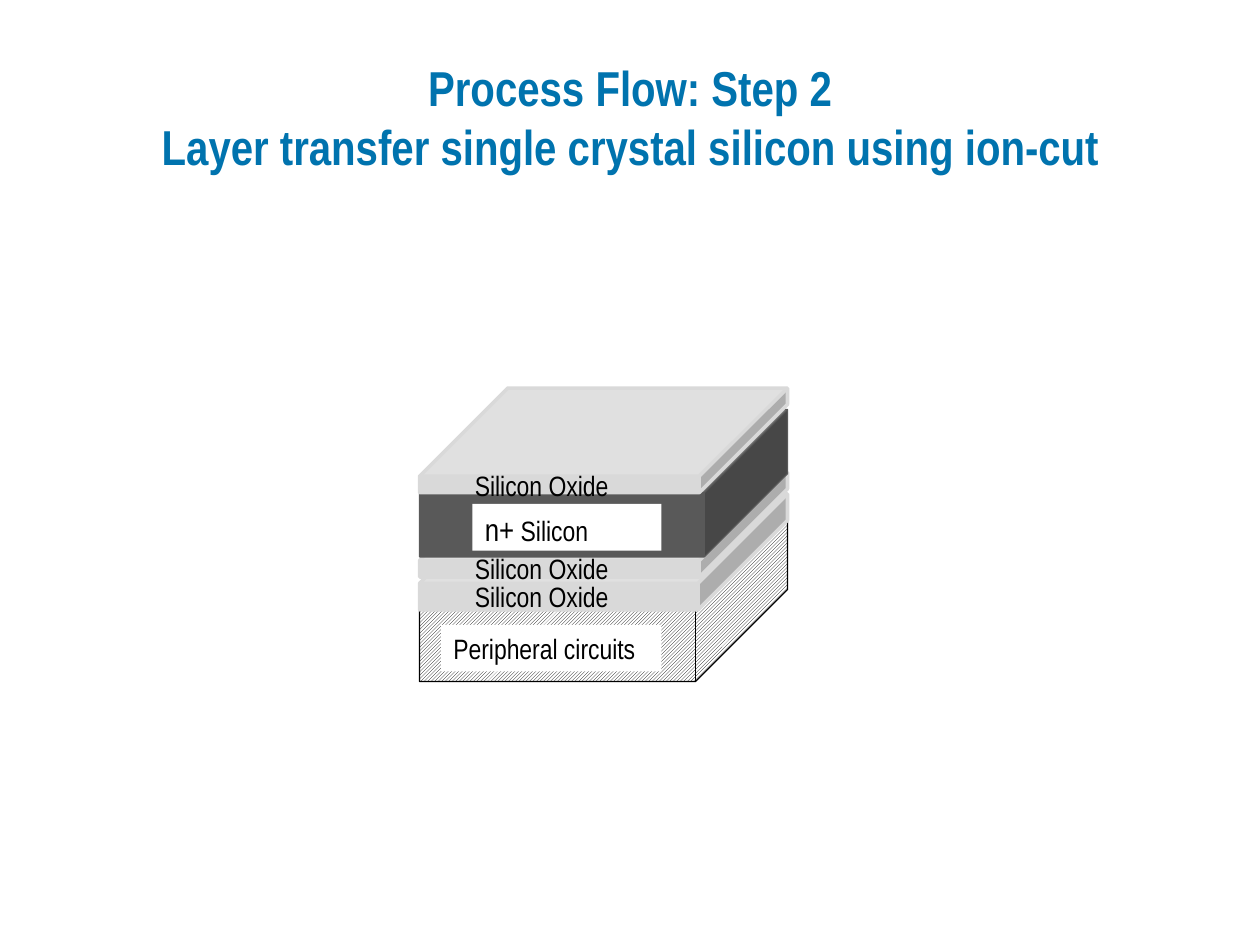
from dataclasses import dataclass

import pptx
import pptx.dml.color
import pptx.enum.dml
import pptx.enum.shapes
import pptx.enum.text
import pptx.util

Inches = pptx.util.Inches
Pt = pptx.util.Pt
RGBColor = pptx.dml.color.RGBColor

BLUE = RGBColor(0x00, 0x73, 0xAE)
BLACK = RGBColor(0x00, 0x00, 0x00)
WHITE = RGBColor(0xFF, 0xFF, 0xFF)
OXIDE = RGBColor(0xD9, 0xD9, 0xD9)
SILICON = RGBColor(0x59, 0x59, 0x59)
FONT = "Arial Narrow"

STACK_LEFT = 3.33
STACK_WIDTH = 2.92
LABEL_HEIGHT = 0.37


@dataclass
class Label:
    spans: list[tuple[str, int]]
    left: float
    top: float
    width: float
    boxed: bool = False


@dataclass
class Layer:
    top: float
    height: float
    depth: float  # receding edge, in inches
    color: RGBColor
    line_width: float
    label: Label
    hatched: bool = False


def oxide_layer(top: float, height: float, depth: float, label_top: float) -> Layer:
    label = Label([("Silicon Oxide", 16)], 3.67, label_top, 2.25)
    return Layer(top, height, depth, OXIDE, 2, label)


def draw_layer(page, layer: Layer) -> None:
    cube = page.shapes.add_shape(
        pptx.enum.shapes.MSO_SHAPE.CUBE, Inches(STACK_LEFT), Inches(layer.top),
        Inches(STACK_WIDTH), Inches(layer.height))
    cube.adjustments[0] = layer.depth / layer.height
    cube.shadow.inherit = False
    if layer.hatched:
        cube.fill.patterned()
        cube.fill.pattern = pptx.enum.dml.MSO_PATTERN.DARK_UPWARD_DIAGONAL
        cube.fill.fore_color.rgb = layer.color
        cube.fill.back_color.rgb = WHITE
    else:
        cube.fill.solid()
        cube.fill.fore_color.rgb = layer.color
    cube.line.color.rgb = layer.color
    cube.line.width = Pt(layer.line_width)


def draw_label(page, label: Label) -> None:
    box = page.shapes.add_textbox(
        Inches(label.left), Inches(label.top), Inches(label.width), Inches(LABEL_HEIGHT))
    if label.boxed:
        box.fill.solid()
        box.fill.fore_color.rgb = WHITE
    frame = box.text_frame
    frame.word_wrap = True
    frame.auto_size = pptx.enum.text.MSO_AUTO_SIZE.SHAPE_TO_FIT_TEXT
    para = frame.paragraphs[0]
    para.font.name = FONT
    para.font.color.rgb = BLACK
    for text, size in label.spans:
        span = para.add_run()
        span.text = text
        span.font.size = Pt(size)


def draw_title(page, text: str) -> None:
    title = page.shapes.title
    title.left, title.top = Inches(0.5), Inches(0.3)
    title.width, title.height = Inches(9), Inches(1.25)
    frame = title.text_frame
    frame.text = text
    frame.word_wrap = True
    frame.auto_size = pptx.enum.text.MSO_AUTO_SIZE.NONE
    frame.vertical_anchor = pptx.enum.text.MSO_ANCHOR.MIDDLE
    para = frame.paragraphs[0]
    para.alignment = pptx.enum.text.PP_ALIGN.CENTER
    para.font.name = FONT
    para.font.size = Pt(28)
    para.font.bold = True
    para.font.color.rgb = BLUE


# Layers from the bottom of the stack to the top
PERIPHERAL_LABEL = Label([("Peripheral circuits", 16)], 3.5, 4.96, 1.75, boxed=True)
SILICON_LABEL = Label([("n+", 18), (" Silicon", 16)], 3.75, 4, 1.5, boxed=True)
LAYERS = [
    Layer(4.08, 1.33, 0.73, BLACK, 0.75, PERIPHERAL_LABEL, hatched=True),
    oxide_layer(3.92, 0.92, 0.71, label_top=4.55),
    oxide_layer(3.75, 0.83, 0.7, label_top=4.33),
    Layer(3.25, 1.17, 0.66, SILICON, 0.75, SILICON_LABEL),
    oxide_layer(3.08, 0.83, 0.7, label_top=3.67),
]


def main() -> None:
    deck = pptx.Presentation()
    deck.slide_width, deck.slide_height = Inches(10), Inches(7.5)
    page = deck.slides.add_slide(deck.slide_layouts[5])  # title only

    draw_title(page, "Process Flow: Step 2\vLayer transfer single crystal silicon using ion-cut")

    # Each label sits above its own layer and below the next one
    for layer in LAYERS:
        draw_layer(page, layer)
        draw_label(page, layer.label)

    deck.save("out.pptx")


if __name__ == "__main__":
    main()
